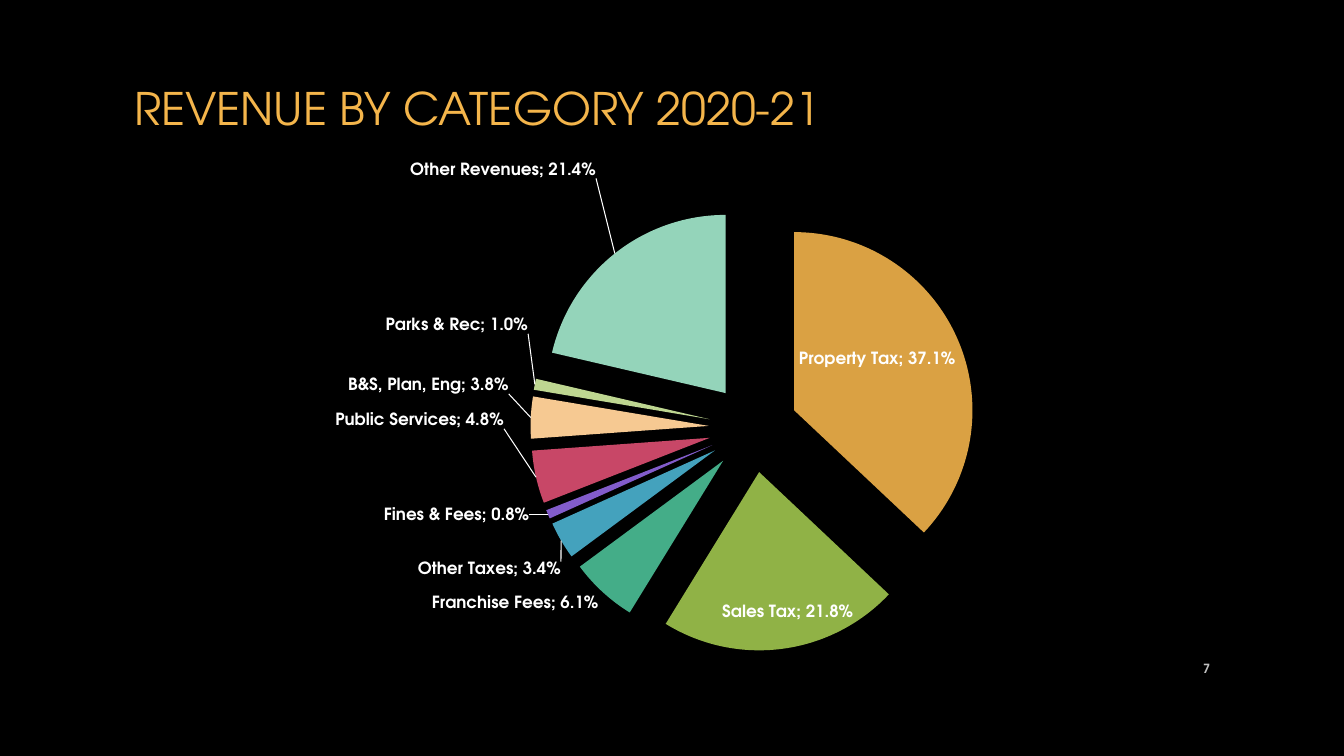
from dataclasses import dataclass

from pptx import Presentation
from pptx.chart.data import CategoryChartData
from pptx.dml.color import RGBColor
from pptx.enum.chart import XL_CHART_TYPE as ChartType
from pptx.enum.text import MSO_ANCHOR as Anchor, PP_ALIGN as Align
from pptx.oxml import parse_xml
from pptx.oxml.ns import nsdecls, qn
from pptx.util import Inches, Pt


@dataclass(frozen=True)
class Theme:
    font: str = "TeX Gyre Adventor"
    background: str = "000000"
    title: str = "F4B54B"
    label: str = "FFFFFF"
    page: str = "BFBFBF"
    title_size: int = 32
    label_size: int = 12
    page_size: int = 9
    slices: tuple = ("DAA143", "90B246", "44AD88", "44A2BD", "825CCB",
                     "C84767", "F6C992", "BED691", "94D4BA")


REVENUES = [
    ("Property Tax", 0.371, (-1.63, 0.3)),
    ("Sales Tax", 0.218, None),
    ("Franchise Fees", 0.061, None),
    ("Other Taxes", 0.034, (0.05, 0.18)),
    ("Fines & Fees", 0.008, (-0.13, -0.09)),
    ("Public Services", 0.048, (-0.26, -0.65)),
    ("B&S, Plan, Eng", 0.038, (-0.16, -0.31)),
    ("Parks & Rec", 0.01, (-0.01, -0.49)),
    ("Other Revenues", 0.214, (-0.15, -0.7)),
]


class RevenueSlide:
    def __init__(self, deck, theme):
        self.theme = theme
        self.slide = deck.slides.add_slide(deck.slide_layouts[5])
        fill = self.slide.background.fill
        fill.solid()
        fill.fore_color.rgb = RGBColor.from_string(theme.background)

    def style(self, font, size, color, bold=False):
        font.name = self.theme.font
        font.size = Pt(size)
        font.bold = bold
        font.color.rgb = RGBColor.from_string(color)

    def title(self, text, left, top, width, height):
        heading = self.slide.shapes.title
        heading.left, heading.top = Inches(left), Inches(top)
        heading.width, heading.height = Inches(width), Inches(height)
        heading.text_frame.text = text
        heading.text_frame.vertical_anchor = Anchor.MIDDLE
        line = heading.text_frame.paragraphs[0]
        line.alignment = Align.LEFT
        self.style(line.runs[0].font, self.theme.title_size, self.theme.title)

    def page_number(self, text, left, top, width, height):
        frame = self.slide.shapes.add_textbox(
            Inches(left), Inches(top), Inches(width), Inches(height)).text_frame
        frame.word_wrap = True
        frame.vertical_anchor = Anchor.MIDDLE
        frame.text = text
        line = frame.paragraphs[0]
        line.alignment = Align.RIGHT
        self.style(line.runs[0].font, self.theme.page_size, self.theme.page, True)

    def pie(self, revenues, left, top, width, height, plot, explosion):
        data = CategoryChartData(number_format="0.0%")
        data.categories = [name for name, share, shift in revenues]
        data.add_series("Series 1", [share for name, share, shift in revenues])
        chart = self.slide.shapes.add_chart(
            ChartType.PIE, Inches(left), Inches(top),
            Inches(width), Inches(height), data).chart
        chart.has_legend = False
        chart.has_title = False
        self.style(chart.font, self.theme.label_size, self.theme.label, True)
        self.place_plot(chart, plot)

        pie = chart.plots[0]
        pie.vary_by_categories = True
        series = pie.series[0]
        series.format.line.fill.background()
        series.format.element.find(qn("c:spPr")).addnext(
            parse_xml(f'<c:explosion {nsdecls("c")} val="{explosion}"/>'))
        for index, color in enumerate(self.theme.slices):
            look = series.points[index].format
            look.fill.solid()
            look.fill.fore_color.rgb = RGBColor.from_string(color)
            look.line.fill.background()
        shifts = {index: (shift[0] / width, shift[1] / height)
                  for index, (name, share, shift) in enumerate(revenues) if shift}
        self.label_slices(series, shifts)

    def layout(self, values, target=""):
        places = "".join(f'<c:{key} val="{value}"/>' for key, value in values.items())
        return (f'<c:layout {nsdecls("c")}><c:manualLayout>{target}{places}'
                "</c:manualLayout></c:layout>")

    def place_plot(self, chart, plot):
        area = chart.element.find(".//" + qn("c:plotArea"))
        for old in area.findall(qn("c:layout")):
            area.remove(old)
        x, y, w, h = plot
        area.insert(0, parse_xml(self.layout(
            {"xMode": "edge", "yMode": "edge", "x": x, "y": y, "w": w, "h": h},
            '<c:layoutTarget val="inner"/>')))

    def label_slices(self, series, shifts):
        theme = self.theme
        shown = {"LegendKey": 0, "Val": 1, "CatName": 1,
                 "SerName": 0, "Percent": 0, "BubbleSize": 0}
        flags = "".join(f'<c:show{key} val="{on}"/>' for key, on in shown.items())
        body = (
            '<c:numFmt formatCode="0.0%" sourceLinked="0"/>'
            "<c:spPr><a:noFill/><a:ln><a:noFill/></a:ln></c:spPr>"
            "<c:txPr><a:bodyPr/><a:p><a:pPr>"
            f'<a:defRPr sz="{theme.label_size * 100}" b="1"><a:solidFill>'
            f'<a:srgbClr val="{theme.label}"/></a:solidFill>'
            f'<a:latin typeface="{theme.font}"/></a:defRPr></a:pPr></a:p></c:txPr>'
            f'<c:dLblPos val="bestFit"/>{flags}<c:separator>; </c:separator>')
        moved = "".join(
            f'<c:dLbl><c:idx val="{index}"/>'
            f'{self.layout({"x": round(x, 4), "y": round(y, 4)})}{body}</c:dLbl>'
            for index, (x, y) in shifts.items())
        leader = (
            '<c:showLeaderLines val="1"/><c:leaderLines><c:spPr><a:ln w="9525">'
            f'<a:solidFill><a:srgbClr val="{theme.label}"/></a:solidFill>'
            "</a:ln></c:spPr></c:leaderLines>")
        labels = parse_xml(
            f'<c:dLbls {nsdecls("c", "a")}>{moved}{body}{leader}</c:dLbls>')
        series.format.element.find(qn("c:cat")).addprevious(labels)


def main():
    deck = Presentation()
    deck.slide_width, deck.slide_height = Inches(13.33), Inches(7.5)
    page = RevenueSlide(deck, Theme())
    page.title("REVENUE BY CATEGORY 2020-21", 1.23, 0.03, 10.83, 2.08)
    page.page_number("7", 11.5, 6.43, 0.6, 0.4)
    page.pie(REVENUES, 1.23, 1.52, 10.58, 5.74,
             plot=(0.18, 0.09, 0.82, 0.77), explosion=25)
    deck.save("out.pptx")


if __name__ == "__main__":
    main()
